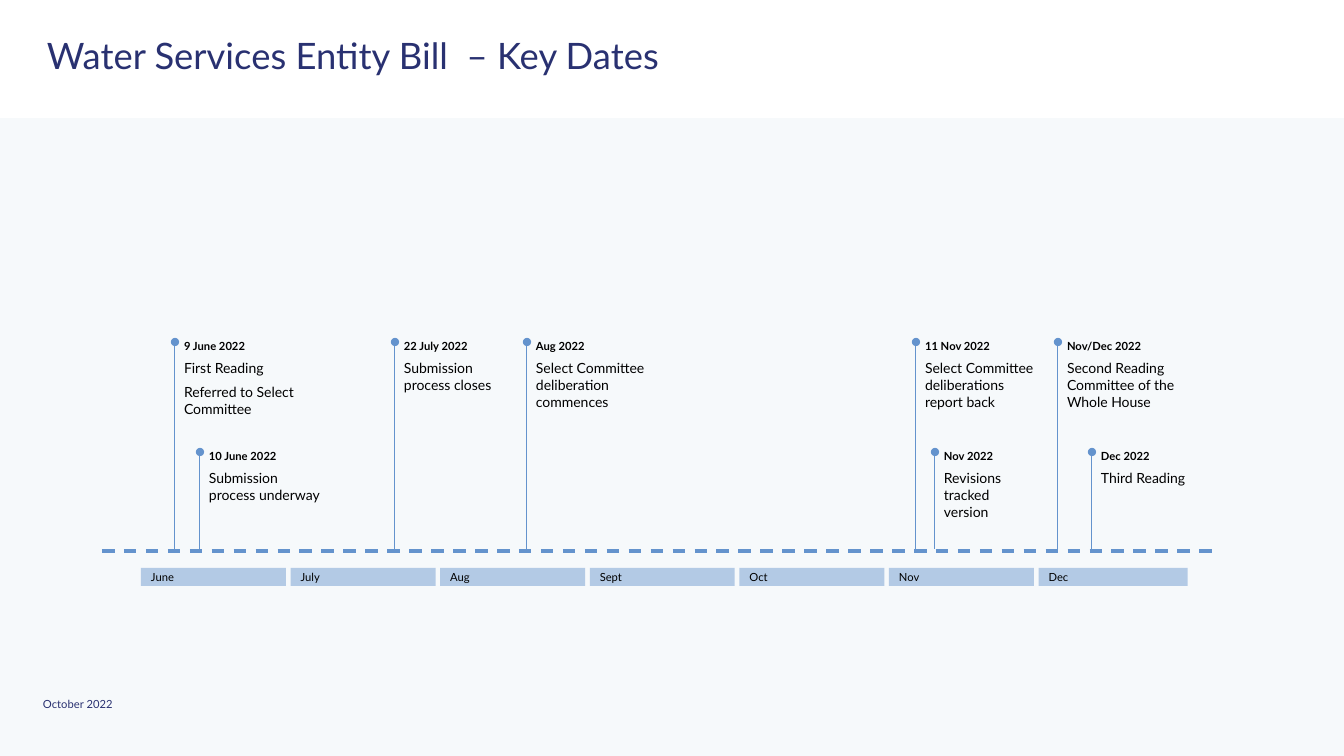
from lxml import etree
from pptx import Presentation
from pptx.dml.color import RGBColor
from pptx.enum.dml import MSO_LINE
from pptx.enum.shapes import MSO_CONNECTOR, MSO_SHAPE
from pptx.enum.text import MSO_ANCHOR, MSO_AUTO_SIZE, PP_ALIGN
from pptx.oxml.ns import qn
from pptx.util import Pt

TITLE = "Water Services Entity Bill  – Key Dates"
ISSUED = "October 2022"
MONTHS = ["June", "July", "Aug", "Sept", "Oct", "Nov", "Dec"]
UPPER, LOWER = 339, 449
EVENTS = [
    (175, UPPER, 113, 79, "9 June 2022", ["First Reading", "Referred to Select Committee"]),
    (200, LOWER, 113, 72, "10 June 2022", ["Submission process underway"]),
    (395, UPPER, 113, 54, "22 July 2022", ["Submission process closes"]),
    (527, UPPER, 113, 72, "Aug 2022", ["Select Committee deliberation commences"]),
    (916, UPPER, 113, 72, "11 Nov 2022", ["Select Committee deliberations report back"]),
    (935, LOWER, 86, 72, "Nov 2022", ["Revisions tracked version"]),
    (1058, UPPER, 113, 72, "Nov/Dec 2022", ["Second Reading Committee of the Whole House"]),
    (1092, LOWER, 86, 54, "Dec 2022", ["Third Reading"]),
]

NAVY = RGBColor(0x29, 0x31, 0x71)
BLUE = RGBColor(0x64, 0x93, 0xCD)
PALE = RGBColor(0xF6, 0xF9, 0xFB)
WHITE = RGBColor(0xFF, 0xFF, 0xFF)
BLACK = RGBColor(0, 0, 0)
FONT = "Lato"
EMU_PER_PX = 914400 / 100.8
WIDTH, HEIGHT = 1344, 756
AXIS_Y, STEM_FOOT = 551, 549
MONTH_LEFT, MONTH_TOP, MONTH_PITCH = 141, 568, 149.6
MONTH_WIDTH, LAST_MONTH_WIDTH, MONTH_HEIGHT = 145, 149, 18


def px(length):
    return round(length * EMU_PER_PX)


def box(*lengths):
    return [px(length) for length in lengths]


def write(frame, lines, size=8, color=BLACK, bold=False, inset=0,
          anchor=MSO_ANCHOR.TOP, fit=MSO_AUTO_SIZE.NONE, heading=None, line_spacing=None):
    frame.word_wrap = True
    frame.auto_size = fit
    frame.vertical_anchor = anchor
    frame.margin_left = frame.margin_right = px(inset)
    frame.margin_top = frame.margin_bottom = px(inset)
    entries = [(line, size, bold) for line in lines]
    if heading:
        entries.insert(0, (heading, 8, True))
    for index, (line, points, strong) in enumerate(entries):
        paragraph = frame.add_paragraph() if index else frame.paragraphs[0]
        paragraph.alignment = PP_ALIGN.LEFT
        if line_spacing:
            paragraph.line_spacing = line_spacing
        if index:
            paragraph.space_before = Pt(5)
            if index == len(entries) - 1:
                paragraph.space_after = Pt(5)
        run = paragraph.add_run()
        run.text = line
        run.font.name = FONT
        run.font.size = Pt(points)
        run.font.bold = strong
        run.font.color.rgb = color


def add_bar(slide, bounds, color):
    bar = slide.shapes.add_shape(MSO_SHAPE.RECTANGLE, *box(*bounds))
    bar.shadow.inherit = False
    bar.fill.solid()
    bar.fill.fore_color.rgb = color
    bar.line.fill.background()
    return bar


def add_rule(slide, ends, weight):
    rule = slide.shapes.add_connector(MSO_CONNECTOR.STRAIGHT, *box(*ends))
    rule.line.color.rgb = BLUE
    rule.line.width = Pt(weight)
    etree.SubElement(rule._element.spPr, qn("a:effectLst"))
    return rule


def main():
    deck = Presentation()
    deck.slide_width, deck.slide_height = box(WIDTH, HEIGHT)
    slide = deck.slides.add_slide(deck.slide_layouts[5])
    slide.background.fill.solid()
    slide.background.fill.fore_color.rgb = PALE

    header = add_bar(slide, (0, 0, WIDTH, 118), WHITE)
    slide.shapes._spTree.insert(2, header._element)

    title = slide.shapes.title
    title.left, title.top, title.width, title.height = box(47, 38, 868, 39)
    write(title.text_frame, [TITLE], size=26, color=NAVY, line_spacing=0.9)

    issued = slide.shapes.add_textbox(*box(43, 697, 227, 13))
    write(issued.text_frame, [ISSUED], color=NAVY, fit=MSO_AUTO_SIZE.SHAPE_TO_FIT_TEXT)

    axis = add_rule(slide, (102, AXIS_Y, 1221, AXIS_Y), 2.25)
    axis.line.dash_style = MSO_LINE.DASH

    for index, month in enumerate(MONTHS):
        width = LAST_MONTH_WIDTH if month == MONTHS[-1] else MONTH_WIDTH
        left = MONTH_LEFT + index * MONTH_PITCH
        bar = add_bar(slide, (left, MONTH_TOP, width, MONTH_HEIGHT), BLUE)
        tint = bar._element.spPr.find(qn("a:solidFill"))[0]
        etree.SubElement(tint, qn("a:alpha"), val="46000")
        write(bar.text_frame, [month], inset=10, anchor=MSO_ANCHOR.MIDDLE)

    for x, top, width, height, date, steps in EVENTS:
        label = slide.shapes.add_textbox(*box(x + 9, top, width, height))
        write(label.text_frame, steps, size=10, heading=date,
              fit=MSO_AUTO_SIZE.SHAPE_TO_FIT_TEXT)
        stem = add_rule(slide, (x, STEM_FOOT, x, top + 3), 0.75)
        etree.SubElement(stem.line._get_or_add_ln(), qn("a:tailEnd"), type="oval")

    deck.save("out.pptx")


if __name__ == "__main__":
    main()
